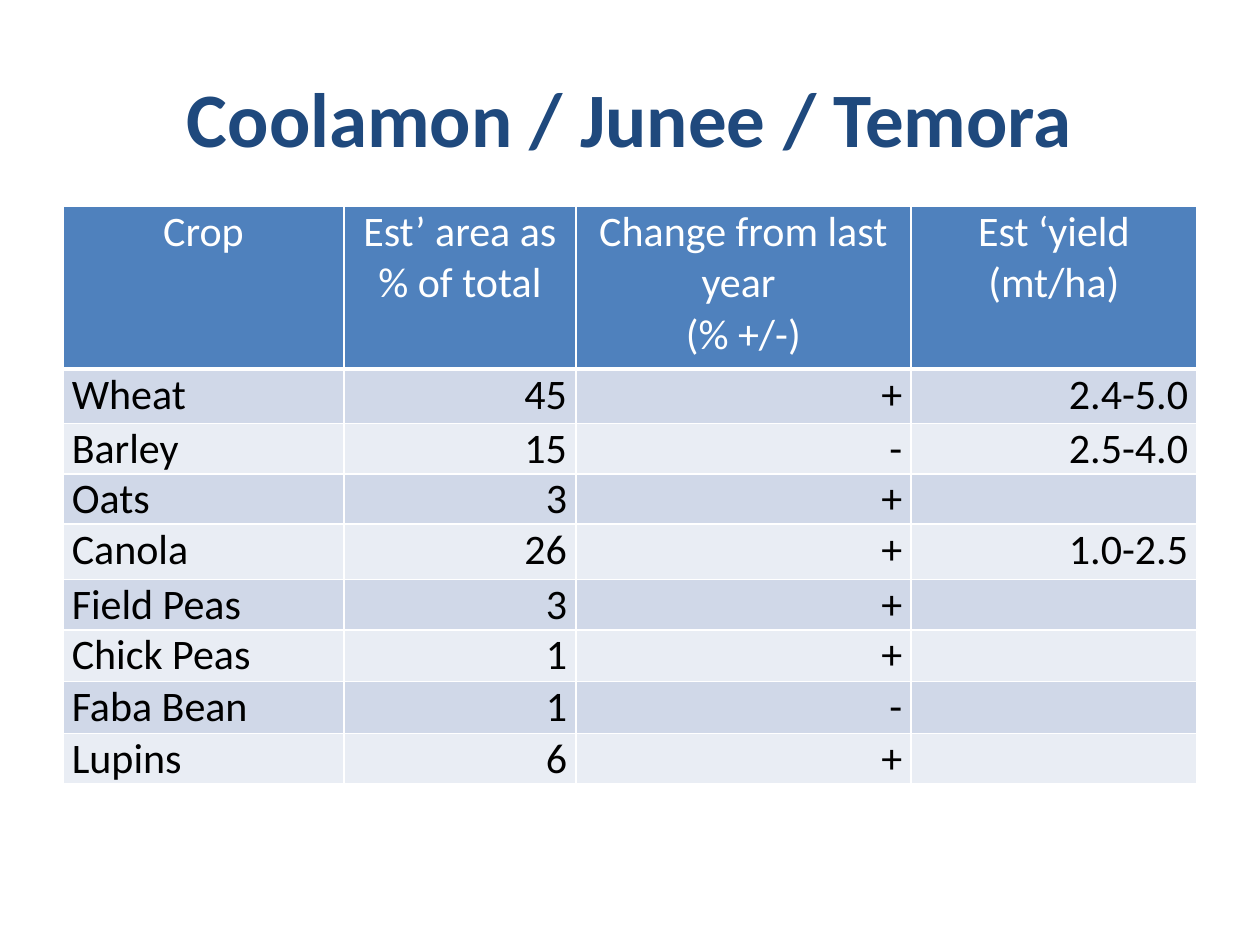
import dataclasses

import lxml.etree
import pptx
import pptx.dml.color
import pptx.enum.text
import pptx.oxml.ns
import pptx.util

Inches = pptx.util.Inches
Align = pptx.enum.text.PP_ALIGN
Anchor = pptx.enum.text.MSO_ANCHOR


@dataclasses.dataclass(frozen=True)
class Theme:
    font: str = "Calibri"
    title_size: int = 44
    table_size: int = 24
    title: str = "1F497D"
    header: str = "4F81BD"
    header_text: str = "FFFFFF"
    body_text: str = "000000"
    bands: tuple = ("D0D8E8", "E9EDF4")
    border: str = "FFFFFF"
    border_width: int = 1
    header_rule_width: int = 3


class SlideBuilder:
    def __init__(self, slide, theme):
        self.slide = slide
        self.theme = theme

    def text(self, frame, lines, size, color, align, bold=False):
        for index, line in enumerate(lines):
            para = frame.paragraphs[0] if index == 0 else frame.add_paragraph()
            para.alignment = align
            span = para.add_run()
            span.text = line
            span.font.name = self.theme.font
            span.font.size = pptx.util.Pt(size)
            span.font.bold = bold
            span.font.color.rgb = pptx.dml.color.RGBColor.from_string(color)

    def title(self, wording, left, top, width, height):
        box = self.slide.shapes.add_textbox(
            Inches(left), Inches(top), Inches(width), Inches(height))
        frame = box.text_frame
        frame.word_wrap = True
        frame.vertical_anchor = Anchor.MIDDLE
        self.text(frame, [wording], self.theme.title_size, self.theme.title,
                  Align.CENTER, bold=True)

    def border(self, cell, side, width):
        properties = cell._tc.get_or_add_tcPr()
        line = lxml.etree.SubElement(
            properties, pptx.oxml.ns.qn(f"a:ln{side}"), w=str(pptx.util.Pt(width)))
        fill = lxml.etree.SubElement(line, pptx.oxml.ns.qn("a:solidFill"))
        lxml.etree.SubElement(fill, pptx.oxml.ns.qn("a:srgbClr"), val=self.theme.border)

    def cell(self, cell, wording, row, column):
        theme = self.theme
        is_header = row == 0
        cell.margin_left = cell.margin_right = Inches(0.07)
        cell.margin_top = cell.margin_bottom = 0
        widths = dict.fromkeys("LRTB", theme.border_width)
        if is_header:
            widths["B"] = theme.header_rule_width
        elif row == 1:
            widths["T"] = theme.header_rule_width
        for side, width in widths.items():
            self.border(cell, side, width)
        fill = theme.header if is_header else theme.bands[(row - 1) % 2]
        cell.fill.solid()
        cell.fill.fore_color.rgb = pptx.dml.color.RGBColor.from_string(fill)
        if is_header:
            align = Align.CENTER
        else:
            align = Align.LEFT if column == 0 else Align.RIGHT
        if wording:
            color = theme.header_text if is_header else theme.body_text
            self.text(cell.text_frame, wording.split("\n"), theme.table_size, color, align)

    def table(self, rows, left, top, widths, heights):
        table = self.slide.shapes.add_table(
            len(rows), len(widths), Inches(left), Inches(top),
            Inches(sum(widths)), Inches(sum(heights))).table
        for column, width in zip(table.columns, widths):
            column.width = Inches(width)
        for table_row, height in zip(table.rows, heights):
            table_row.height = Inches(height)
        for row, wordings in enumerate(rows):
            for column, wording in enumerate(wordings):
                self.cell(table.cell(row, column), wording, row, column)


CROPS = [
    ("Crop", "Est’ area as % of total", "Change from last year \n(% +/-)",
     "Est ‘yield\n(mt/ha)"),
    ("Wheat", "45", "+", "2.4-5.0"),
    ("Barley", "15", "-", "2.5-4.0"),
    ("Oats", "3", "+", ""),
    ("Canola", "26", "+", "1.0-2.5"),
    ("Field Peas", "3", "+", ""),
    ("Chick Peas", "1", "+", ""),
    ("Faba Bean", "1", "-", ""),
    ("Lupins", "6", "+", ""),
]


def main():
    deck = pptx.Presentation()
    deck.slide_width = Inches(10)
    deck.slide_height = Inches(7.5)
    page = SlideBuilder(deck.slides.add_slide(deck.slide_layouts[6]), Theme())
    page.title("Coolamon / Junee / Temora", 0.5, 0.3, 9, 1.25)
    page.table(CROPS, 0.5, 1.64, widths=[2.23, 1.84, 2.66, 2.27],
               heights=[1.29, 0.43, 0.37, 0.35, 0.44, 0.39, 0.41, 0.41, 0.39])
    deck.save("out.pptx")


if __name__ == "__main__":
    main()
